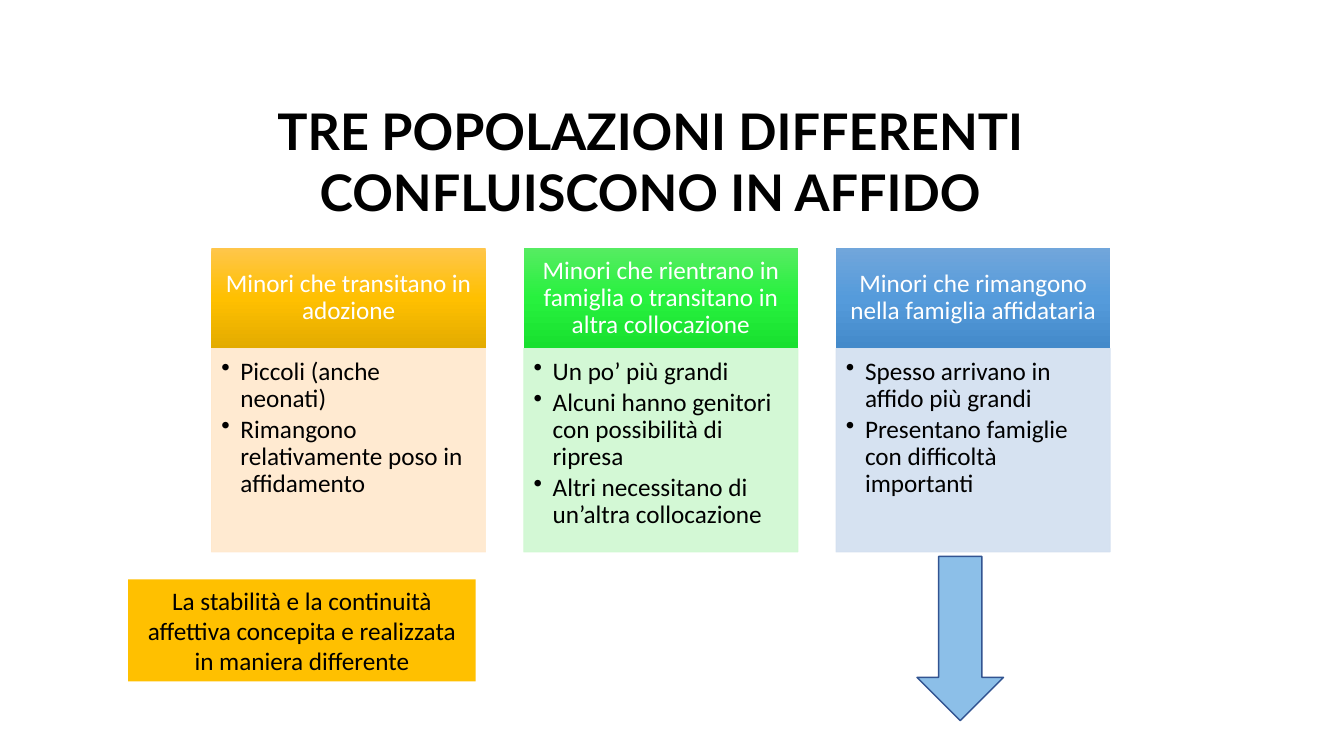
from copy import deepcopy
from dataclasses import dataclass

from lxml.etree import SubElement
from pptx import Presentation
from pptx.dml.color import RGBColor
from pptx.enum.shapes import MSO_SHAPE
from pptx.enum.text import MSO_ANCHOR, MSO_AUTO_SIZE, PP_ALIGN
from pptx.oxml.ns import qn
from pptx.shapes.autoshape import Shape
from pptx.slide import Slide
from pptx.text.text import TextFrame, _Paragraph
from pptx.util import Cm, Pt


@dataclass(frozen=True)
class Theme:
    title_font: str = "Lato"
    body_font: str = "Calibri"
    title_size: float = 36
    body_size: float = 18
    dark: str = "000000"
    light: str = "FFFFFF"
    note: str = "FFC000"
    arrow_fill: str = "8CBFE8"
    arrow_line: str = "325491"
    amber: tuple[str, ...] = ("FFC64B", "FFC000", "E3AB00")
    green: tuple[str, ...] = ("56EC62", "27F13E", "18E02F")
    blue: tuple[str, ...] = ("71A6DB", "559BDB", "448ACA")
    amber_tint: str = "FFE8CC"
    green_tint: str = "CFF8D1"
    blue_tint: str = "D2DFF0"


@dataclass(frozen=True)
class Area:
    left: float
    top: float
    width: float
    height: float


@dataclass(frozen=True)
class Population:
    heading: str
    points: tuple[str, ...]
    gradient: tuple[str, ...]
    tint: str


THEME = Theme()
POPULATIONS = (
    Population(
        "Minori che transitano in adozione",
        ("Piccoli (anche neonati)", "Rimangono relativamente poso in affidamento"),
        THEME.amber, THEME.amber_tint,
    ),
    Population(
        "Minori che rientrano in famiglia o transitano in altra collocazione",
        ("Un po’ più grandi", "Alcuni hanno genitori con possibilità di ripresa",
         "Altri necessitano di un’altra collocazione"),
        THEME.green, THEME.green_tint,
    ),
    Population(
        "Minori che rimangono nella famiglia affidataria",
        ("Spesso arrivano in affido più grandi",
         "Presentano famiglie con difficoltà importanti"),
        THEME.blue, THEME.blue_tint,
    ),
)
FIRST_LEFT, COLUMN_STEP, COLUMN_WIDTH = 5.33, 7.87, 6.91
HEADING_TOP, HEADING_HEIGHT, BODY_HEIGHT = 6.25, 2.53, 5.13


def color(value: str) -> RGBColor:
    return RGBColor.from_string(value)


def add_box(page: Slide, area: Area, kind: MSO_SHAPE = MSO_SHAPE.RECTANGLE) -> Shape:
    box = page.shapes.add_shape(
        kind, Cm(area.left), Cm(area.top), Cm(area.width), Cm(area.height))
    box.shadow.inherit = False
    box.line.fill.background()
    return box


def fill_solid(box: Shape, value: str) -> None:
    box.fill.solid()
    box.fill.fore_color.rgb = color(value)


def fill_gradient(box: Shape, values: tuple[str, ...]) -> None:
    box.fill.gradient()
    box.fill.gradient_angle = 270
    first = next(box.element.spPr.iter(qn("a:gs")))
    first.addnext(deepcopy(first))
    for index, stop in enumerate(box.fill.gradient_stops):
        stop.position = index / (len(values) - 1)
        stop.color.rgb = color(values[index])


def set_opacity(box: Shape, percent: int) -> None:
    for swatch in box.element.spPr.iter(qn("a:srgbClr")):
        SubElement(swatch, qn("a:alpha"), val=str(percent * 1000))


def set_margins(frame: TextFrame, left: float, top: float,
                right: float, bottom: float) -> None:
    frame.margin_left, frame.margin_top = Cm(left), Cm(top)
    frame.margin_right, frame.margin_bottom = Cm(right), Cm(bottom)


def add_bullet(para: _Paragraph) -> None:
    para.level = 1
    properties = para._p.get_or_add_pPr()
    properties.set("marL", str(Cm(0.48)))
    properties.set("indent", str(-Cm(0.48)))
    SubElement(properties, qn("a:buChar"), char="•")


def write(frame: TextFrame, text: str, value: str, align: PP_ALIGN = PP_ALIGN.CENTER,
          font: str = THEME.body_font, size: float = THEME.body_size,
          bold: bool = False) -> None:
    frame.word_wrap = True
    frame.text = text
    for para in frame.paragraphs:
        para.alignment = align
        for span in para.runs:
            span.font.name = font
            span.font.size = Pt(size)
            span.font.bold = bold
            span.font.color.rgb = color(value)


def add_population(page: Slide, population: Population, left: float) -> None:
    # Coloured heading
    heading = add_box(page, Area(left, HEADING_TOP, COLUMN_WIDTH, HEADING_HEIGHT))
    fill_gradient(heading, population.gradient)
    frame = heading.text_frame
    frame.vertical_anchor = MSO_ANCHOR.MIDDLE
    set_margins(frame, 0.36, 0.2, 0.36, 0.2)
    write(frame, population.heading, THEME.light)
    frame.paragraphs[0].line_spacing = 0.9

    # Tinted panel with bullet points
    body = add_box(
        page, Area(left, HEADING_TOP + HEADING_HEIGHT, COLUMN_WIDTH, BODY_HEIGHT))
    fill_solid(body, population.tint)
    body.line.color.rgb = color(population.tint)
    body.line.width = Pt(0.5)
    set_opacity(body, 90)
    frame = body.text_frame
    frame.vertical_anchor = MSO_ANCHOR.TOP
    set_margins(frame, 0.25, 0.25, 0.36, 0.41)
    write(frame, "\n".join(population.points), THEME.dark, PP_ALIGN.LEFT)
    for para in frame.paragraphs:
        add_bullet(para)
        para.line_spacing = 0.9
        para.space_after = Pt(2.7)


def main() -> None:
    deck = Presentation()
    deck.slide_width, deck.slide_height = Cm(33.87), Cm(19.05)
    page = deck.slides.add_slide(deck.slide_layouts[6])

    # Title
    title = page.shapes.add_textbox(Cm(4.45), Cm(2.41), Cm(23.88), Cm(3.33))
    write(title.text_frame, "TRE POPOLAZIONI DIFFERENTI CONFLUISCONO IN AFFIDO",
          THEME.dark, font=THEME.title_font, size=THEME.title_size, bold=True)
    title.text_frame.auto_size = MSO_AUTO_SIZE.SHAPE_TO_FIT_TEXT

    # Three populations
    for index, population in enumerate(POPULATIONS):
        add_population(page, population, FIRST_LEFT + index * COLUMN_STEP)

    # Note on stability
    note = add_box(page, Area(3.23, 14.6, 8.76, 2.57))
    fill_solid(note, THEME.note)
    write(note.text_frame, "La stabilità e la continuità affettiva concepita e "
          "realizzata in maniera differente", THEME.dark)
    note.text_frame.auto_size = MSO_AUTO_SIZE.SHAPE_TO_FIT_TEXT

    # Arrow below the last population
    arrow = add_box(page, Area(23.11, 14.02, 2.18, 4.14), MSO_SHAPE.DOWN_ARROW)
    fill_solid(arrow, THEME.arrow_fill)
    arrow.line.color.rgb = color(THEME.arrow_line)
    arrow.line.width = Pt(1)

    deck.save("out.pptx")


if __name__ == "__main__":
    main()
